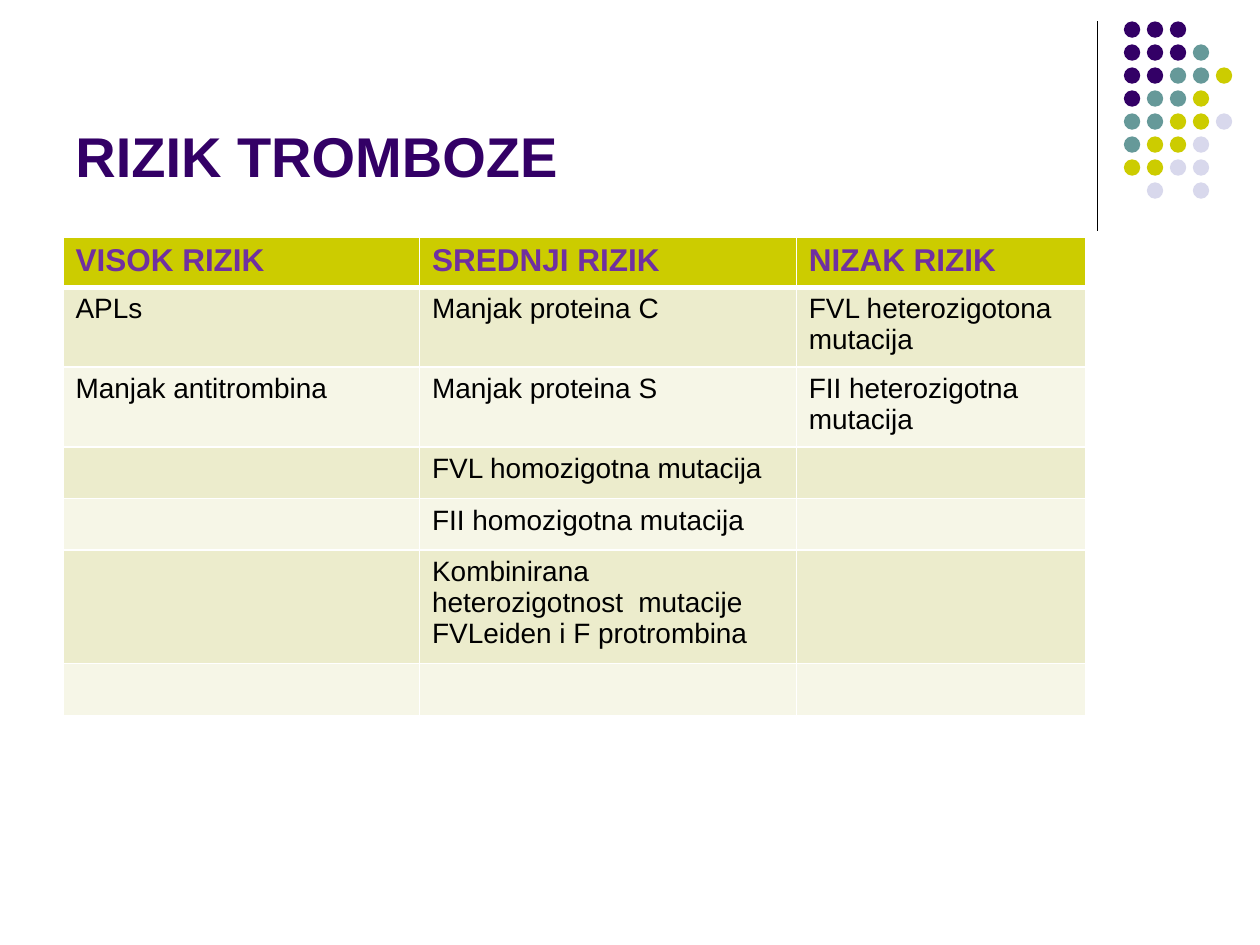
from lxml.etree import SubElement
from pptx import Presentation
from pptx.dml.color import RGBColor
from pptx.enum.shapes import MSO_CONNECTOR, MSO_SHAPE
from pptx.enum.text import MSO_ANCHOR
from pptx.oxml import parse_xml
from pptx.oxml.ns import nsdecls, qn
from pptx.util import Inches, Pt

PURPLE, TEAL, LIME, LILAC = "330066", "669999", "CCCC00", "D8D8EC"
DOT_COLORS = {"P": PURPLE, "T": TEAL, "L": LIME, "V": LILAC}
DOT_ROWS = ["PPP", "PPPT", "PPTTL", "PTTL", "TTLLV", "TLLV", "LLVV", " V V"]
BAND_FILLS = ["ECECCC", "F6F6E7"]
RISK_ROWS = [
    ["VISOK RIZIK", "SREDNJI RIZIK", "NIZAK RIZIK"],
    ["APLs", "Manjak proteina C", "FVL heterozigotona mutacija"],
    ["Manjak antitrombina", "Manjak proteina S", "FII heterozigotna mutacija"],
    ["", "FVL homozigotna mutacija", ""],
    ["", "FII homozigotna mutacija", ""],
    ["", "Kombinirana heterozigotnost  mutacije FVLeiden i F protrombina", ""],
    ["", "", ""],
]
COLUMN_WIDTHS = [2.83, 2.99, 2.3]
ROW_HEIGHTS = [0.4, 0.59, 0.59, 0.41, 0.41, 0.83, 0.41]


def color(hex_string):
    return RGBColor.from_string(hex_string)


def write_text(frame, text, size=16, hex_color="000000", bold=False):
    frame.word_wrap = True
    span = frame.paragraphs[0].add_run()
    span.text = text
    span.font.name = "Arial"
    span.font.size = Pt(size)
    span.font.bold = bold
    span.font.color.rgb = color(hex_color)


def add_title(page, left, top, width, height):
    box = page.shapes.add_textbox(Inches(left), Inches(top), Inches(width), Inches(height))
    box.text_frame.vertical_anchor = MSO_ANCHOR.BOTTOM
    write_text(box.text_frame, "RIZIK TROMBOZE", size=32, hex_color=PURPLE, bold=True)


def add_divider(page, left, top, height):
    line = page.shapes.add_connector(
        MSO_CONNECTOR.STRAIGHT, Inches(left), Inches(top), Inches(left), Inches(top + height))
    line.line.color.rgb = color("000000")
    line.line.width = Pt(0.75)
    SubElement(line._element.spPr, qn("a:effectLst"))


def add_dots(page, left, top, width, diameter=0.13):
    """Draw the dot pattern; five columns fill the width, rows use the same pitch."""
    pitch = (width - diameter) / 4
    group = page.shapes.add_group_shape()
    for row, codes in enumerate(DOT_ROWS):
        for column, code in enumerate(codes):
            if code == " ":
                continue
            dot = group.shapes.add_shape(
                MSO_SHAPE.OVAL, Inches(left + column * pitch), Inches(top + row * pitch),
                Inches(diameter), Inches(diameter))
            dot.shadow.inherit = False
            dot.fill.solid()
            dot.fill.fore_color.rgb = color(DOT_COLORS[code])
            dot.line.fill.background()


def set_borders(cell, bottom):
    """Give a cell white borders, 1 pt except for the bottom one."""
    properties = cell._tc.get_or_add_tcPr()
    widths = {"lnL": 1, "lnR": 1, "lnT": 1, "lnB": bottom}
    for position, (side, width) in enumerate(widths.items()):
        properties.insert(position, parse_xml(
            f'<a:{side} {nsdecls("a")} w="{Pt(width)}"><a:solidFill>'
            f'<a:srgbClr val="FFFFFF"/></a:solidFill></a:{side}>'))


def add_risk_table(page, left, top, width, height):
    table = page.shapes.add_table(
        len(RISK_ROWS), len(COLUMN_WIDTHS),
        Inches(left), Inches(top), Inches(width), Inches(height)).table
    for column, column_width in zip(table.columns, COLUMN_WIDTHS):
        column.width = Inches(column_width)
    for row, row_height in zip(table.rows, ROW_HEIGHTS):
        row.height = Inches(row_height)
    for row, texts in enumerate(RISK_ROWS):
        header = row == 0
        for column, text in enumerate(texts):
            cell = table.cell(row, column)
            cell.fill.solid()
            cell.fill.fore_color.rgb = color(LIME if header else BAND_FILLS[(row - 1) % 2])
            set_borders(cell, bottom=3 if header else 1)
            if header:
                write_text(cell.text_frame, text, size=18, hex_color="7030A0", bold=True)
            elif text:
                write_text(cell.text_frame, text)


def main():
    deck = Presentation()
    deck.slide_width, deck.slide_height = Inches(10), Inches(7.5)
    page = deck.slides.add_slide(deck.slide_layouts[6])
    add_divider(page, 8.71, 0.17, 1.66)
    add_dots(page, 8.92, 0.17, 0.86)
    add_title(page, 0.5, 0.13, 8.25, 1.42)
    add_risk_table(page, 0.5, 1.88, sum(COLUMN_WIDTHS), sum(ROW_HEIGHTS))
    deck.save("out.pptx")


if __name__ == "__main__":
    main()
